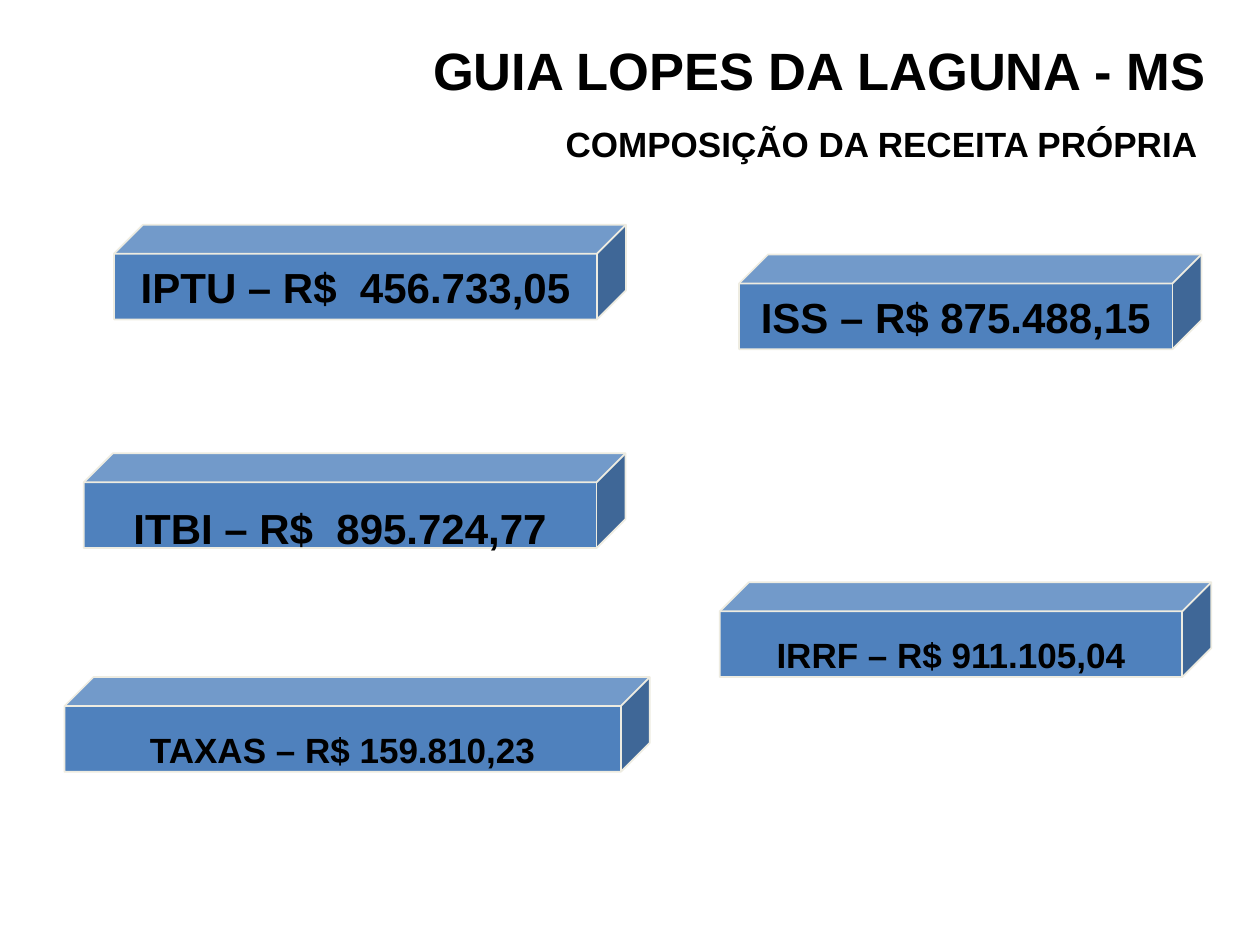
from pptx import Presentation, util as u
from pptx.dml.color import RGBColor
from pptx.enum import shapes, text

THEME = {
    "font": "Arial",
    "ink": RGBColor(0, 0, 0),
    "face": RGBColor(0x4F, 0x81, 0xBD),
    "edge": RGBColor(0xEE, 0xEC, 0xE1),
    "title": u.Pt(30),
    "large": u.Pt(24),
    "small": u.Pt(20),
}
HEADINGS = [
    ("GUIA LOPES DA LAGUNA - MS", "title", 3.61, 0.64, 20.95, 1.55),
    ("COMPOSIÇÃO DA RECEITA PRÓPRIA ", "small", 4.24, 2.34, 20.32, 1.09),
]
REVENUES = [
    ("IPTU – R$  456.733,05", "large", 2.3, 4.53, 10.32, 0),
    ("ISS – R$ 875.488,15", "large", 14.9, 5.13, 9.32, 0),
    ("ITBI – R$  895.724,77", "large", 1.69, 9.14, 10.92, 0.25),
    ("TAXAS – R$ 159.810,23", "small", 1.3, 13.65, 11.8, 0.21),
    ("IRRF – R$ 911.105,04", "small", 14.51, 11.74, 9.91, 0.21),
]
BAR_HEIGHT = 1.91
BAR_DEPTH = 0.306


def write(shape, wording, size, alignment):
    """Put one bold line of text in a shape."""
    shape.text_frame.text = wording
    paragraph = shape.text_frame.paragraphs[0]
    paragraph.alignment = alignment
    font = paragraph.runs[0].font
    font.name, font.size, font.bold = THEME["font"], THEME[size], True
    font.color.rgb = THEME["ink"]


def add_heading(slide, wording, size, *box):
    """Add a right-aligned heading."""
    shape = slide.shapes.add_textbox(*map(u.Cm, box))
    shape.text_frame.word_wrap = True
    write(shape, wording, size, text.PP_ALIGN.RIGHT)


def add_bar(slide, wording, size, left, top, width, drop):
    """Add a revenue bar whose label sits a given drop below the middle."""
    box = map(u.Cm, (left, top, width, BAR_HEIGHT))
    shape = slide.shapes.add_shape(shapes.MSO_SHAPE.CUBE, *box)
    shape.adjustments[0] = BAR_DEPTH
    shape.shadow.inherit = False
    shape.fill.solid()
    shape.fill.fore_color.rgb = THEME["face"]
    shape.line.color.rgb = THEME["edge"]
    shape.line.width = u.Pt(1)
    frame = shape.text_frame
    frame.word_wrap = False
    frame.vertical_anchor = text.MSO_ANCHOR.MIDDLE
    frame.margin_top, frame.margin_bottom = u.Cm(2 * drop), u.Cm(0)
    write(shape, wording, size, text.PP_ALIGN.CENTER)


def main():
    """Build and save the revenue slide."""
    presentation = Presentation()
    presentation.slide_width = u.Cm(25.4)
    presentation.slide_height = u.Cm(19.05)
    slide = presentation.slides.add_slide(presentation.slide_layouts[6])
    for heading in HEADINGS:
        add_heading(slide, *heading)
    for revenue in REVENUES:
        add_bar(slide, *revenue)
    presentation.save("out.pptx")


if __name__ == "__main__":
    main()
